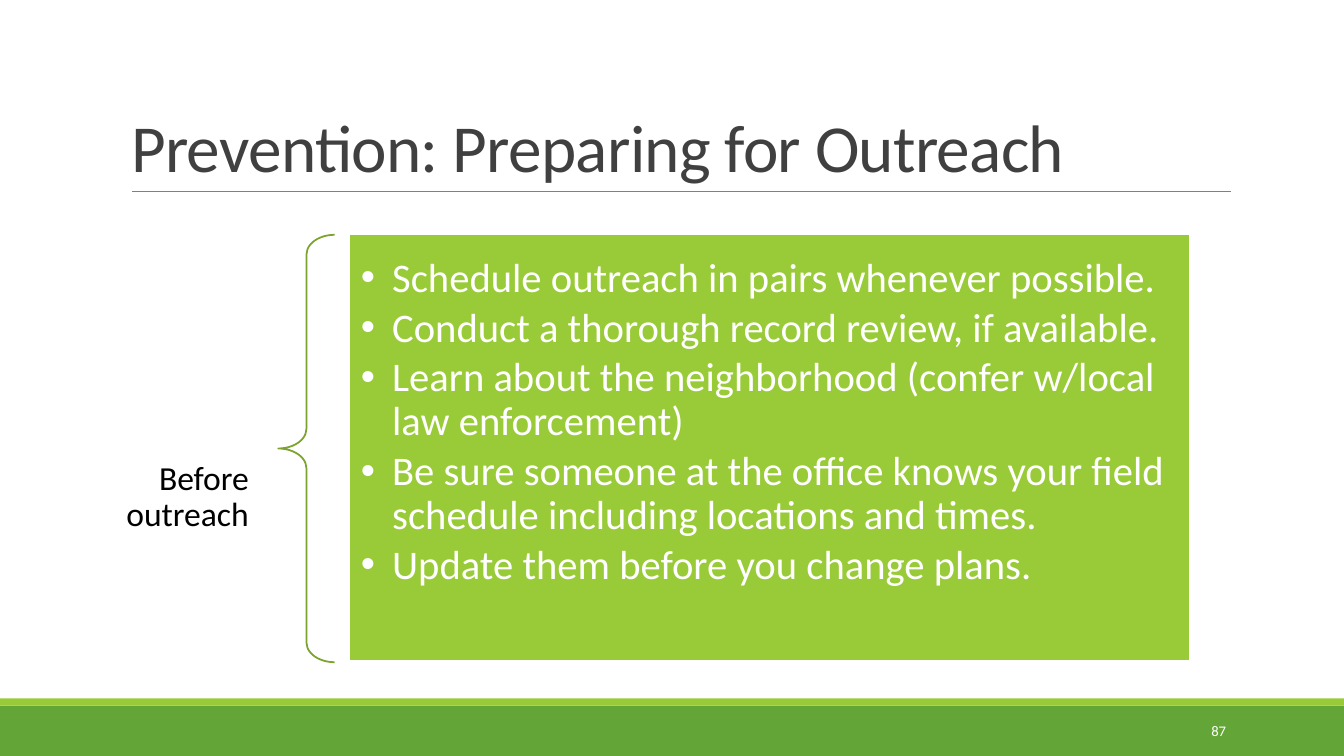
from dataclasses import dataclass

from pptx import Presentation
from pptx.dml.color import RGBColor
from pptx.enum import shapes, text
from pptx.oxml import parse_xml
from pptx.oxml.ns import nsdecls
from pptx.util import Inches, Pt


@dataclass(frozen=True)
class Theme:
    font: str = "Calibri"
    green: str = "63A537"
    lime: str = "99CB38"
    olive: str = "7BA32D"
    gray: str = "808080"
    ink: str = "404040"
    black: str = "000000"
    white: str = "FFFFFF"
    title_size: float = 48
    list_size: float = 29
    label_size: float = 24
    number_size: float = 10.5


THEME = Theme()
TITLE = "Prevention: Preparing for Outreach"
STEPS = [
    "Schedule outreach in pairs whenever possible.",
    "Conduct a thorough record review, if available.",
    "Learn about the neighborhood (confer w/local law enforcement)",
    "Be sure someone at the office knows your field schedule including locations and times.",
    "Update them before you change plans.",
]


def rgb(color):
    return RGBColor.from_string(color)


def apply(target, values):
    for name, value in values.items():
        setattr(target, name, value)


def place(box, left, top, width, height):
    apply(box, {"left": Inches(left), "top": Inches(top),
                "width": Inches(width), "height": Inches(height)})


def set_line(shape, color, width):
    shape.line.color.rgb = rgb(color)
    shape.line.width = Pt(width)


def write(box, lines, size, color, frame_format, para_format):
    frame = box.text_frame
    apply(frame, {"word_wrap": True, "auto_size": text.MSO_AUTO_SIZE.NONE, **frame_format})
    for index, line in enumerate(lines):
        para = frame.paragraphs[0] if index == 0 else frame.add_paragraph()
        apply(para, para_format)
        span = para.add_run()
        span.text = line
        apply(span.font, {"name": THEME.font, "size": Pt(size)})
        span.font.color.rgb = rgb(color)
    return frame.paragraphs


def add_bar(page, top, height, color):
    bar = page.shapes.add_shape(shapes.MSO_SHAPE.RECTANGLE, 0, Inches(top),
                                Inches(13.33), Inches(height))
    bar.shadow.inherit = False
    bar.fill.solid()
    bar.fill.fore_color.rgb = rgb(color)
    bar.line.fill.background()


def add_rule(page, left, right, top):
    rule = page.shapes.add_connector(shapes.MSO_CONNECTOR.STRAIGHT, Inches(left),
                                     Inches(top), Inches(right), Inches(top))
    set_line(rule, THEME.gray, 0.5)
    rule._element.spPr.append(parse_xml(f"<a:effectLst {nsdecls('a')}/>"))


def add_brace(page, left, top, width, height):
    brace = page.shapes.add_shape(shapes.MSO_SHAPE.LEFT_BRACE, Inches(left), Inches(top),
                                  Inches(width), Inches(height))
    brace.shadow.inherit = False
    brace.adjustments[0] = 0.35
    brace.fill.background()
    set_line(brace, THEME.olive, 1.25)


def add_label(page, words, area, size, color, frame_format):
    box = page.shapes.add_textbox(0, 0, 0, 0)
    place(box, *area)
    write(box, [words], size, color,
          {"vertical_anchor": text.MSO_ANCHOR.MIDDLE, **frame_format},
          {"alignment": text.PP_ALIGN.RIGHT, "line_spacing": 0.9})


def fill_title(page):
    title = page.shapes.title
    place(title, 1.2, 0.31, 10.98, 1.59)
    paras = write(title, [TITLE], THEME.title_size, THEME.ink,
                  {"vertical_anchor": text.MSO_ANCHOR.BOTTOM},
                  {"alignment": text.PP_ALIGN.LEFT, "line_spacing": 0.85})
    paras[0].runs[0].font._element.set("spc", "-50")


def fill_steps(page):
    body = page.placeholders[1]
    place(body, 3.46, 2.32, 8.34, 4.24)
    body.fill.solid()
    body.fill.fore_color.rgb = rgb(THEME.lime)
    set_line(body, THEME.white, 1.25)
    inset = Inches(0.12)
    paras = write(body, STEPS, THEME.list_size, THEME.white,
                  {"vertical_anchor": text.MSO_ANCHOR.TOP, "margin_left": inset,
                   "margin_right": inset, "margin_top": Inches(0.23), "margin_bottom": inset},
                  {"alignment": text.PP_ALIGN.LEFT, "line_spacing": 0.9,
                   "space_before": Pt(0), "space_after": Pt(THEME.list_size * 0.15)})
    for para in paras:
        properties = para._p.get_or_add_pPr()
        properties.set("marL", str(Inches(0.31)))
        properties.set("indent", str(-Inches(0.31)))


def main():
    deck = Presentation()
    deck.slide_width, deck.slide_height = Inches(13.33), Inches(7.5)
    page = deck.slides.add_slide(deck.slide_layouts[1])
    add_bar(page, 7, 0.5, THEME.green)
    add_bar(page, 6.93, 0.07, THEME.lime)
    add_rule(page, 1.31, 12.21, 1.9)
    fill_title(page)
    add_label(page, "Before outreach", (0.33, 4.5, 2.33, 0.87), THEME.label_size, THEME.black,
              {"margin_left": Inches(0.19), "margin_right": Inches(0.19)})
    add_brace(page, 2.76, 2.33, 0.56, 4.24)
    fill_steps(page)
    add_label(page, "87", (10.83, 7.06, 1.43, 0.4), THEME.number_size, THEME.white, {})
    deck.save("out.pptx")


if __name__ == "__main__":
    main()
